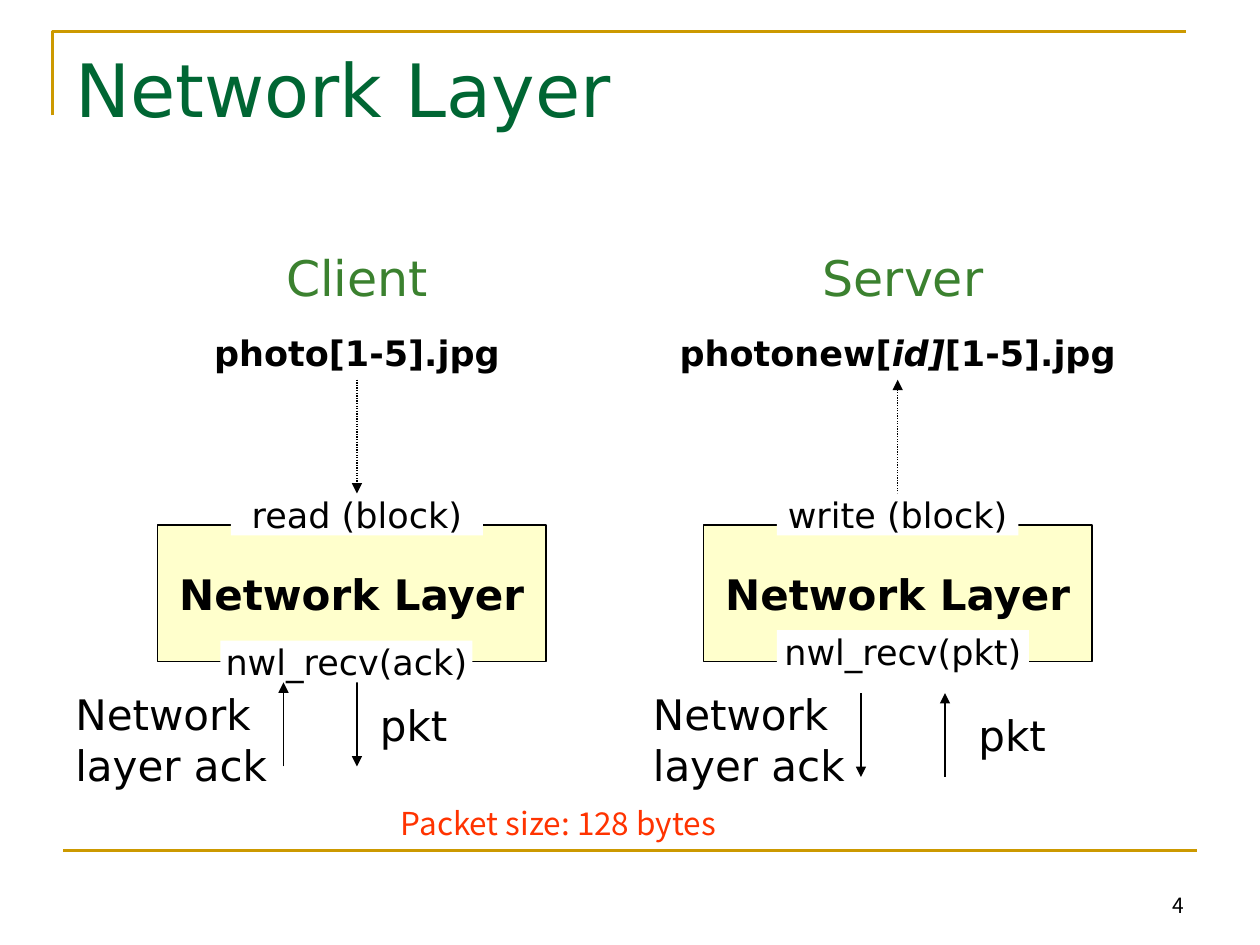
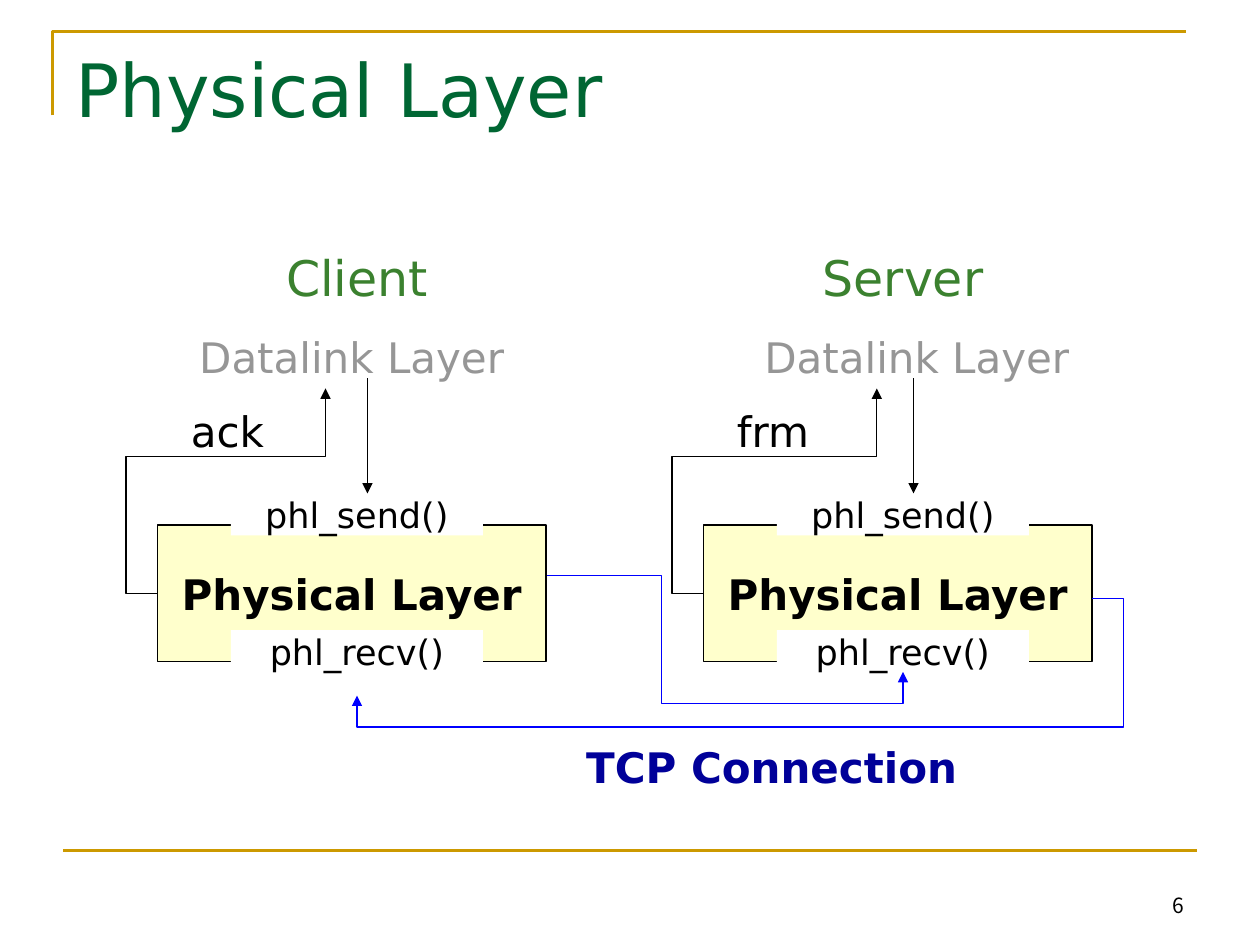
from lxml import etree
from pptx import Presentation
from pptx.dml.color import RGBColor
from pptx.enum.dml import MSO_LINE
from pptx.enum.shapes import MSO_CONNECTOR, MSO_SHAPE
from pptx.enum.text import MSO_ANCHOR, MSO_AUTO_SIZE, PP_ALIGN
from pptx.oxml.ns import qn
from pptx.util import Pt

LEFT, CENTER, RIGHT = PP_ALIGN.LEFT, PP_ALIGN.CENTER, PP_ALIGN.RIGHT
TOP, MIDDLE, BOTTOM = MSO_ANCHOR.TOP, MSO_ANCHOR.MIDDLE, MSO_ANCHOR.BOTTOM
STRAIGHT, ELBOW = MSO_CONNECTOR.STRAIGHT, MSO_CONNECTOR.ELBOW
DOTTED = MSO_LINE.ROUND_DOT
TOP_SIDE, BOTTOM_SIDE = 0, 2

SANS, NOTO = "DejaVu Sans", "Noto Sans CJK KR"
BLACK, WHITE, GOLD, BLUE = "000000", "FFFFFF", "CC9900", "0000FF"
TITLE_GREEN, SIDE_GREEN, NAVY = "006633", "3B812F", "000099"
GRAY, RED, CREAM = "969696", "FF3300", "FFFFCC"

SERVER_SHIFT = 312  # distance from a client element to its server twin
SIDES = (0, SERVER_SHIFT)


def rgb(value):
    return RGBColor.from_string(value)


def set_text(shape, spans, size, color=BLACK, font=SANS, align=LEFT,
             anchor=TOP, wrap=True, inset=None, indent=0, **styles):
    """Fill a shape with one paragraph; spans is a string or (text, styles) pairs."""
    frame = shape.text_frame
    frame_format = {"word_wrap": wrap, "auto_size": MSO_AUTO_SIZE.NONE,
                    "vertical_anchor": anchor}
    if inset is not None:
        for side in ("left", "top", "right", "bottom"):
            frame_format[f"margin_{side}"] = Pt(inset)
    for name, value in frame_format.items():
        setattr(frame, name, value)
    para = frame.paragraphs[0]
    para.alignment = align
    if indent:
        para._p.get_or_add_pPr().set("marL", str(Pt(indent)))
    if isinstance(spans, str):
        spans = [(spans, {})]
    for text, extra in spans:
        span = para.add_run()
        span.text = text
        font_format = {"name": font, "size": Pt(size), **styles, **extra}
        for name, value in font_format.items():
            setattr(span.font, name, value)
        span.font.color.rgb = rgb(color)


def add_text(page, left, top, width, height, spans, size, **styles):
    box = page.shapes.add_textbox(Pt(left), Pt(top), Pt(width), Pt(height))
    set_text(box, spans, size, **styles)
    return box


def add_box(page, left, top, width, height, fill, outline=None):
    box = page.shapes.add_shape(MSO_SHAPE.RECTANGLE, Pt(left), Pt(top),
                                Pt(width), Pt(height))
    box.shadow.inherit = False
    box.fill.solid()
    box.fill.fore_color.rgb = rgb(fill)
    if outline:
        box.line.color.rgb = rgb(outline)
        box.line.width = Pt(0.75)
    else:
        box.line.fill.background()
    return box


def add_layer_box(page, side, name):
    box = add_box(page, 90 + side, 300, 222, 78, CREAM, BLACK)
    set_text(box, name, 24, align=CENTER, anchor=MIDDLE, wrap=False, bold=True)
    return box


def add_call_label(page, left, top, text, width=144):
    """White label over the edge of a layer box, naming a function."""
    label = add_box(page, left, top, width, 24, WHITE)
    set_text(label, text, 20, align=CENTER, inset=0)
    return label


def add_line(page, start, end, color=BLACK, width=0.75, kind=STRAIGHT, dash=None):
    line = page.shapes.add_connector(kind, *(Pt(value) for value in start + end))
    line.line.color.rgb = rgb(color)
    line.line.width = Pt(width)
    if dash:
        line.line.dash_style = dash
    etree.SubElement(line._element.spPr, qn("a:effectLst"))
    return line


def add_arrow(page, start, end, **styles):
    arrow = add_line(page, start, end, **styles)
    etree.SubElement(arrow.line._get_or_add_ln(), qn("a:tailEnd"), type="triangle")
    return arrow


def add_bent_arrow(page, start, end, via_x, via_y, color=BLACK):
    """Arrow that runs to via_x, then to via_y, then across and into its end."""
    arrow = add_arrow(page, start, end, color=color, kind=ELBOW)
    geometry = arrow._element.spPr.find(qn("a:prstGeom"))
    geometry.set("prst", "bentConnector4")
    guides = geometry.find(qn("a:avLst"))
    for number, via in enumerate((via_x, via_y)):
        ratio = (via - start[number]) / (end[number] - start[number])
        etree.SubElement(guides, qn("a:gd"), name=f"adj{number + 1}",
                         fmla=f"val {round(ratio * 100000)}")


def add_page(deck, title, number):
    """Add a slide with the shared frame, title, number and column headings."""
    page = deck.slides.add_slide(deck.slide_layouts[5])
    builder = page.shapes.build_freeform(Pt(30), Pt(66))
    builder.add_line_segments([(Pt(30), Pt(18)), (Pt(678), Pt(18))], close=False)
    corner = builder.convert_to_shape()
    corner.shadow.inherit = False
    corner.fill.background()
    corner.line.color.rgb = rgb(GOLD)
    corner.line.width = Pt(1.5)
    add_line(page, (36, 486), (684, 486), GOLD, 1.5)
    add_text(page, 516, 492, 168, 36, number, 12, font=NOTO, align=RIGHT,
             anchor=BOTTOM)

    heading = page.shapes.title
    place = {"left": 36, "top": 21.6, "width": 648, "height": 90}
    for name, value in place.items():
        setattr(heading, name, Pt(value))
    set_text(heading, title, 42, color=TITLE_GREEN)
    for left, width, side_name in ((132, 144, "Client"), (456, 120, "Server")):
        add_text(page, left, 138, width, 41, side_name, 28, color=SIDE_GREEN,
                 align=CENTER)
    return page


def add_network_page(deck):
    page = add_page(deck, "Network Layer", "4")
    file_style = {"align": CENTER, "bold": True}
    photo = add_text(page, 84, 186, 240, 31, "photo[1-5].jpg", 20, **file_style)
    new_photo = add_text(
        page, 372, 186, 282, 31,
        [("photonew[", {}), ("id]", {"italic": True}), ("[1-5].jpg", {})],
        20, **file_style)
    client_box, server_box = [add_layer_box(page, side, "Network Layer")
                              for side in SIDES]

    write_arrow = add_arrow(page, (513, 300), (513, 217), dash=DOTTED)
    write_arrow.begin_connect(server_box, TOP_SIDE)
    write_arrow.end_connect(new_photo, BOTTOM_SIDE)
    add_arrow(page, (204, 378), (204, 438))

    read_label = add_call_label(page, 132, 282, "read (block)")
    add_call_label(page, 126, 366, "nwl_recv(ack)")
    add_call_label(page, 444, 282, "write (block)", 138)
    add_call_label(page, 444, 360, "nwl_recv(pkt)")

    read_arrow = add_arrow(page, (204, 217), (204, 282), dash=DOTTED)
    read_arrow.begin_connect(photo, BOTTOM_SIDE)
    read_arrow.end_connect(read_label, TOP_SIDE)
    add_arrow(page, (162, 438), (162, 390))
    add_arrow(page, (492, 396), (492, 444))
    add_arrow(page, (540, 444), (540, 396))

    for left, top in ((210, 396), (552, 402)):
        add_text(page, left, top, 60, 36, "pkt", 24)
    for left in (36, 366):
        add_text(page, left, 390, 144, 65, "Network layer ack", 24)
    add_text(page, 222, 456, 207, 29, "Packet size: 128 bytes", 18, color=RED,
             font=NOTO)


def add_physical_page(deck):
    page = add_page(deck, "Physical Layer", "6")
    add_text(page, 276, 420, 330, 36, "TCP Connection", 24, color=NAVY,
             align=CENTER, bold=True)
    add_bent_arrow(page, (312, 329), (516, 384), 378, 402, BLUE)
    columns = zip(SIDES, ("ack", "frm"), (240, 246), (30, 46), (186, 501))
    for side, unit, width, indent, arrow_end in columns:
        add_text(page, 66 + side, 186, width, 36, "Datalink Layer", 24,
                 color=GRAY, align=CENTER, indent=indent)
        add_layer_box(page, side, "Physical Layer")
        add_call_label(page, 132 + side, 282, "phl_send()")
        add_call_label(page, 132 + side, 360, "phl_recv()")
        add_bent_arrow(page, (90 + side, 339), (arrow_end, 222), 72 + side, 261)
        add_arrow(page, (210 + side, 216), (210 + side, 282))
        add_text(page, 102 + side, 228, 60, 36, unit, 24)
    add_bent_arrow(page, (624, 342), (204, 397.5), 642, 415.5, BLUE)


def main():
    deck = Presentation()
    deck.slide_width, deck.slide_height = Pt(720), Pt(540)
    add_network_page(deck)
    add_physical_page(deck)
    deck.save("out.pptx")


if __name__ == "__main__":
    main()
